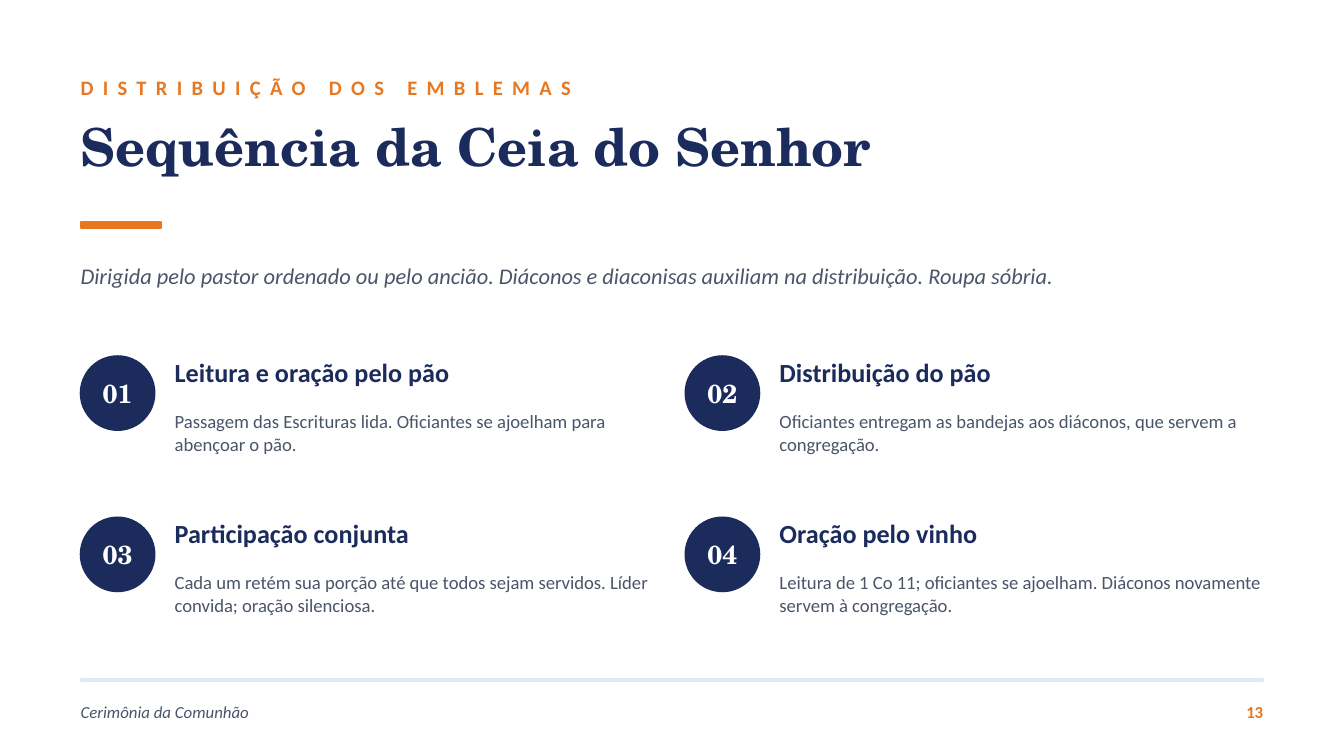
from dataclasses import dataclass

from pptx import Presentation
from pptx.dml.color import RGBColor as Rgb
from pptx.enum.shapes import MSO_SHAPE as Shape
from pptx.enum.text import MSO_ANCHOR as Anchor, MSO_AUTO_SIZE as AutoSize, PP_ALIGN as Align
from pptx.util import Pt


@dataclass(frozen=True)
class Theme:
    navy: str = "1A2B5C"
    orange: str = "E87722"
    slate: str = "4A5568"
    mist: str = "E2E8F0"
    white: str = "FFFFFF"
    sans: str = "Calibri"
    serif: str = "TeX Gyre Schola"
    title: int = 28
    heading: int = 14
    lead: int = 12
    label: int = 11
    body: int = 10
    footer: int = 9


THEME = Theme()
STYLES = {
    "label": (THEME.orange, {"name": THEME.sans, "size": Pt(THEME.label), "bold": True}),
    "title": (THEME.navy, {"name": THEME.serif, "size": Pt(THEME.title), "bold": True}),
    "lead": (THEME.slate, {"name": THEME.sans, "size": Pt(THEME.lead), "italic": True}),
    "number": (THEME.white, {"name": THEME.serif, "size": Pt(THEME.heading), "bold": True}),
    "heading": (THEME.navy, {"name": THEME.sans, "size": Pt(THEME.heading), "bold": True}),
    "body": (THEME.slate, {"name": THEME.sans, "size": Pt(THEME.body)}),
    "footer": (THEME.slate, {"name": THEME.sans, "size": Pt(THEME.footer), "italic": True}),
    "page number": (THEME.orange, {"name": THEME.sans, "size": Pt(THEME.footer), "bold": True}),
}

LEFT = 43.2
CIRCLE = 39.6
TEXT_OFFSET = 50.4
COLUMN_STEP = 324
ROW_TOP = 190.8
ROW_STEP = 86.4
STEPS = [
    ("Leitura e oração pelo pão",
     "Passagem das Escrituras lida. Oficiantes se ajoelham para abençoar o pão."),
    ("Distribuição do pão",
     "Oficiantes entregam as bandejas aos diáconos, que servem a congregação."),
    ("Participação conjunta",
     "Cada um retém sua porção até que todos sejam servidos. Líder convida; oração silenciosa."),
    ("Oração pelo vinho",
     "Leitura de 1 Co 11; oficiantes se ajoelham. Diáconos novamente servem à congregação."),
]


def set_attributes(target, values):
    for name, value in values.items():
        setattr(target, name, value)


def write(shape, text, style, anchor=Anchor.TOP, align=Align.LEFT):
    frame = shape.text_frame
    set_attributes(frame, {
        "word_wrap": True, "auto_size": AutoSize.NONE, "vertical_anchor": anchor,
        "margin_left": 0, "margin_top": 0, "margin_right": 0, "margin_bottom": 0,
    })
    para = frame.paragraphs[0]
    para.alignment = align
    span = para.add_run()
    span.text = text
    color, values = STYLES[style]
    set_attributes(span.font, values)
    span.font.color.rgb = Rgb.from_string(color)
    return span


def add_text(page, area, text, style, **layout):
    box = page.shapes.add_textbox(*map(Pt, area))
    return write(box, text, style, **layout)


def add_block(page, kind, area, color):
    block = page.shapes.add_shape(kind, *map(Pt, area))
    block.shadow.inherit = False
    block.fill.solid()
    block.fill.fore_color.rgb = Rgb.from_string(color)
    block.line.color.rgb = Rgb.from_string(color)
    block.line.width = Pt(1)
    return block


def place_title(page, area, text):
    title = page.shapes.title
    set_attributes(title, dict(zip(("left", "top", "width", "height"), map(Pt, area))))
    write(title, text, "title")


def add_step(page, index, heading, detail):
    row, column = divmod(index, 2)
    left = LEFT + column * COLUMN_STEP
    top = ROW_TOP + row * ROW_STEP
    circle = add_block(page, Shape.OVAL, (left, top, CIRCLE, CIRCLE), THEME.navy)
    write(circle, f"{index + 1:02}", "number", anchor=Anchor.MIDDLE, align=Align.CENTER)
    text_left = left + TEXT_OFFSET
    add_text(page, (text_left, top, 266.4, 28.8), heading, "heading")
    add_text(page, (text_left, top + 28.8, 266.4, 54), detail, "body")


def add_footer(page, text, number):
    add_block(page, Shape.RECTANGLE, (LEFT, 363.6, 633.6, 1.44), THEME.mist)
    add_text(page, (LEFT, 370.8, 360, 21.6), text, "footer", anchor=Anchor.MIDDLE)
    add_text(page, (640.8, 370.8, 36, 21.6), number, "page number",
             anchor=Anchor.MIDDLE, align=Align.RIGHT)


def main():
    deck = Presentation()
    deck.slide_width, deck.slide_height = Pt(720), Pt(405)
    page = deck.slides.add_slide(deck.slide_layouts[5])

    label = add_text(page, (LEFT, 36, 432, 21.6), "DISTRIBUIÇÃO DOS EMBLEMAS", "label",
                     anchor=Anchor.MIDDLE)
    label.font._element.set("spc", "500")
    place_title(page, (LEFT, 61.2, 648, 50.4), "Sequência da Ceia do Senhor")
    add_block(page, Shape.RECTANGLE, (LEFT, 118.8, 43.2, 3.6), THEME.orange)
    add_text(page, (LEFT, 140.4, 648, 36),
             "Dirigida pelo pastor ordenado ou pelo ancião. "
             "Diáconos e diaconisas auxiliam na distribuição. Roupa sóbria.", "lead")
    for index, (heading, detail) in enumerate(STEPS):
        add_step(page, index, heading, detail)
    add_footer(page, "Cerimônia da Comunhão", "13")

    deck.save("out.pptx")


if __name__ == "__main__":
    main()
